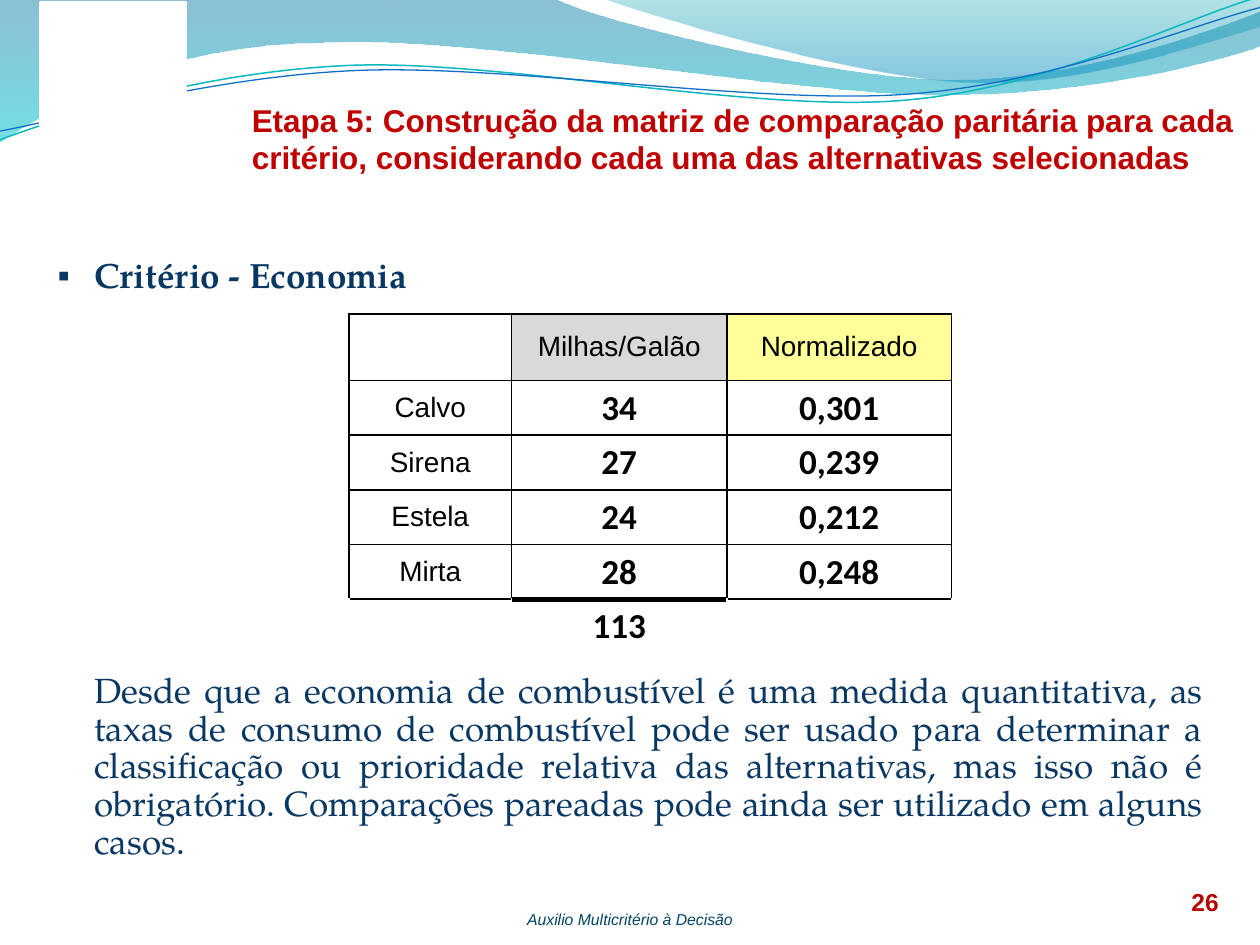
from lxml import etree
from pptx import Presentation
from pptx.dml.color import RGBColor
from pptx.enum.shapes import MSO_SHAPE
from pptx.enum.text import MSO_ANCHOR, PP_ALIGN
from pptx.oxml.ns import qn
from pptx.util import Inches, Pt

CENTER, JUSTIFY = PP_ALIGN.CENTER, PP_ALIGN.JUSTIFY
MIDDLE = MSO_ANCHOR.MIDDLE
RECT = MSO_SHAPE.RECTANGLE

WHITE = RGBColor(0xFF, 0xFF, 0xFF)
BLACK = RGBColor(0, 0, 0)
NAVY = RGBColor(0x08, 0x37, 0x63)
RED = RGBColor(0xC0, 0, 0)
DARK_RED = RGBColor(0xB8, 0, 0)
SLATE = RGBColor(0, 0x45, 0x63)
GRAY = RGBColor(0xD9, 0xD9, 0xD9)
YELLOW = RGBColor(0xFF, 0xFF, 0x99)
TEAL = RGBColor(0x0A, 0xB8, 0xBF)
BLUE = RGBColor(0x0F, 0x6F, 0xC6)
DEEP = RGBColor(0, 0x74, 0xA1)
AQUA = RGBColor(0, 0xC6, 0xCF)
SEA = RGBColor(0, 0xA1, 0xA9)
SKY = RGBColor(0, 0x8B, 0xBF)

# A pair is a corner; six numbers are the controls and end of a curve.
BAND = [(0, -0.01), (4.4, -0.01), (4.76, 0.17, 6.64, 0.63, 7.58, 0.63),
        (8.53, 0.63, 9.58, 0.26, 10, 0.09), (10.01, 0.36),
        (9.83, 0.44, 8.7, 0.76, 7.46, 0.75),
        (6.22, 0.75, 3.82, 0.28, 2.57, 0.34),
        (1.29, 0.35, 0.46, 0.83, -0.01, 1.13)]
CREST = [(4.79, -0.01), (5.09, 0.11, 6.82, 0.62, 7.69, 0.65),
         (8.56, 0.69, 9.61, 0.32, 10, 0.21), (10, 0)]
UPPER = [(0, 1.11), (0.48, 0.93, 1.58, 0.57, 2.77, 0.52),
         (3.95, 0.47, 5.93, 0.89, 7.13, 0.8),
         (8.33, 0.71, 9.38, 0.15, 9.98, -0.02)]
LOWER = [(0, 1.04), (0.47, 0.96, 1.64, 0.61, 2.83, 0.56),
         (4.03, 0.51, 5.97, 0.83, 7.17, 0.75),
         (8.36, 0.67, 9.41, 0.21, 10, 0.06)]

ROWS = [("", "Milhas/Galão", "Normalizado"),
        ("Calvo", "34", "0,301"),
        ("Sirena", "27", "0,239"),
        ("Estela", "24", "0,212"),
        ("Mirta", "28", "0,248"),
        ("", "113", "")]
BODY = ("Desde que a economia de combustível é uma medida quantitativa, as "
        "taxas de consumo de combustível pode ser usado para determinar a "
        "classificação ou prioridade relativa das alternativas, mas isso não é "
        "obrigatório. Comparações pareadas pode ainda ser utilizado em alguns "
        "casos.")


def style(para, font, size, color, bold=False, italic=False):
    for run in para.runs:
        run.font.name, run.font.size = font, Pt(size)
        run.font.color.rgb = color
        run.font.bold, run.font.italic = bold, italic


def add_text(slide, box, text):
    frame = slide.shapes.add_textbox(*map(Inches, box)).text_frame
    frame.word_wrap = True
    frame.text = text
    return frame


def bend(shape, path):
    """Join the segments of each curve into one cubic curve."""
    lines = iter(list(shape.element.iter(qn("a:lnTo"))))
    for part in path[1:]:
        first = next(lines)
        if len(part) == 2:
            continue
        first.tag = qn("a:cubicBezTo")
        for _ in range(2):
            line = next(lines)
            first.append(line[0])
            line.getparent().remove(line)


def add_path(slide, box, path, closed):
    left, top = box
    points = [(Inches(left + part[i]), Inches(top + part[i + 1]))
              for part in path for i in range(0, len(part), 2)]
    pen = slide.shapes.build_freeform(*points[0])
    pen.add_line_segments(points[1:], close=closed)
    shape = pen.convert_to_shape()
    bend(shape, path)
    shape.shadow.inherit = False
    return shape


def add_wave(slide, box, path, stops):
    """Each stop is a place, a colour and a percentage of opacity."""
    shape = add_path(slide, box, path, True)
    shape.line.fill.background()
    shape.fill.gradient()
    shape.fill.gradient_angle = 270
    for stop, (place, color, _) in zip(shape.fill.gradient_stops, stops):
        stop.position, stop.color.rgb = place, color
    marks = shape.element.spPr.iter(qn("a:srgbClr"))
    for mark, (_, _, alpha) in zip(marks, stops):
        etree.SubElement(mark, qn("a:alpha"), val=str(alpha * 1000))


def add_banner(slide, box):
    add_wave(slide, box, BAND, [(0, DEEP, 45), (1, AQUA, 55)])
    add_wave(slide, box, CREST, [(0, SEA, 30), (0.8, SKY, 45)])
    for path, color, width in ((UPPER, TEAL, 0.85), (LOWER, BLUE, 0.75)):
        line = add_path(slide, box, path, False)
        line.fill.background()
        line.line.color.rgb, line.line.width = color, Pt(width)


def add_patch(slide, box):
    patch = slide.shapes.add_shape(RECT, *map(Inches, box))
    patch.shadow.inherit = False
    patch.fill.solid()
    patch.fill.fore_color.rgb = patch.line.color.rgb = WHITE
    patch.line.width = Pt(2)


def add_footer(slide, box):
    left, top, width, _ = box
    frame = add_text(slide, (left, top + 0.33, width, 0.15),
                     "Auxilio Multicritério à Decisão")
    frame.margin_left = frame.margin_right = 0
    frame.margin_top = frame.margin_bottom = 0
    note = frame.paragraphs[0]
    style(note, "Arial", 9, SLATE, italic=True)
    page = add_text(slide, (left + 9.15, top, 0.83, 0.4), "26").paragraphs[0]
    page.line_spacing = Pt(24)
    style(page, "Arial", 14, DARK_RED, bold=True)
    note.alignment = page.alignment = CENTER


def add_title(slide, box):
    frame = add_text(slide, box, "Etapa 5: Construção da matriz de comparação "
                     "paritária para cada critério, considerando cada uma das "
                     "alternativas selecionadas")
    style(frame.paragraphs[0], "Arial", 18, RED, bold=True)


def add_body(slide, box):
    frame = add_text(slide, box, "Critério - Economia\n" + BODY)
    head, body = frame.paragraphs
    for para in (head, body):
        para.alignment, para.line_spacing = JUSTIFY, 0.9
        props = para._p.get_or_add_pPr()
        props.set("marL", str(Inches(0.29)))
        props.set("indent", "0")
        style(para, "TeX Gyre Pagella", 20, NAVY, bold=para is head)
    props = head._p.get_or_add_pPr()
    props.set("indent", str(-Inches(0.29)))
    etree.SubElement(props, qn("a:buFont"), typeface="Arial")
    etree.SubElement(props, qn("a:buChar"), char="▪")
    body.space_before = Pt(215.5)


def add_border(cell, side, width):
    props = cell._tc.get_or_add_tcPr()
    line = etree.SubElement(props, qn("a:ln" + side), w=str(Pt(width)))
    fill = etree.SubElement(line, qn("a:solidFill"))
    etree.SubElement(fill, qn("a:srgbClr"), val=str(BLACK))


def add_grid(slide, box):
    table = slide.shapes.add_table(len(ROWS), 3, *map(Inches, box)).table
    table.first_row = table.horz_banding = False
    for col, width in zip(table.columns, (1.29, 1.71, 1.78)):
        col.width = Inches(width)
    last = len(ROWS) - 1
    for r, row in enumerate(ROWS):
        table.rows[r].height = Inches(0.43 if r else 0.53)
        for c, text in enumerate(row):
            cell = table.cell(r, c)
            for side in "T" if r == last else "LRTB":
                total = c == 1 and (r, side) in ((last - 1, "B"), (last, "T"))
                add_border(cell, side, 3 if total else 1)
            shade = (None, GRAY, YELLOW)[c] if r == 0 else None
            if shade:
                cell.fill.solid()
                cell.fill.fore_color.rgb = shade
            else:
                cell.fill.background()
            cell.vertical_anchor = MIDDLE
            cell.text_frame.text = text
            para = cell.text_frame.paragraphs[0]
            para.alignment = CENTER
            if r and c:
                style(para, "Calibri", 20, BLACK, bold=True)
            else:
                style(para, "Arial", 16, BLACK)


def main():
    deck = Presentation()
    deck.slide_width, deck.slide_height = Inches(10), Inches(7.5)
    slide = deck.slides.add_slide(deck.slide_layouts[6])
    add_banner(slide, (0, 0))
    add_footer(slide, (0, 6.89, 10, 0.48))
    add_patch(slide, (0.32, 0.02, 1.15, 0.98))
    add_body(slide, (0.36, 2, 9.29, 4.95))
    add_title(slide, (1.9, 0.75, 8.1, 0.67))
    add_grid(slide, (2.77, 2.49, 4.78, 2.7))
    deck.save("out.pptx")


if __name__ == "__main__":
    main()
